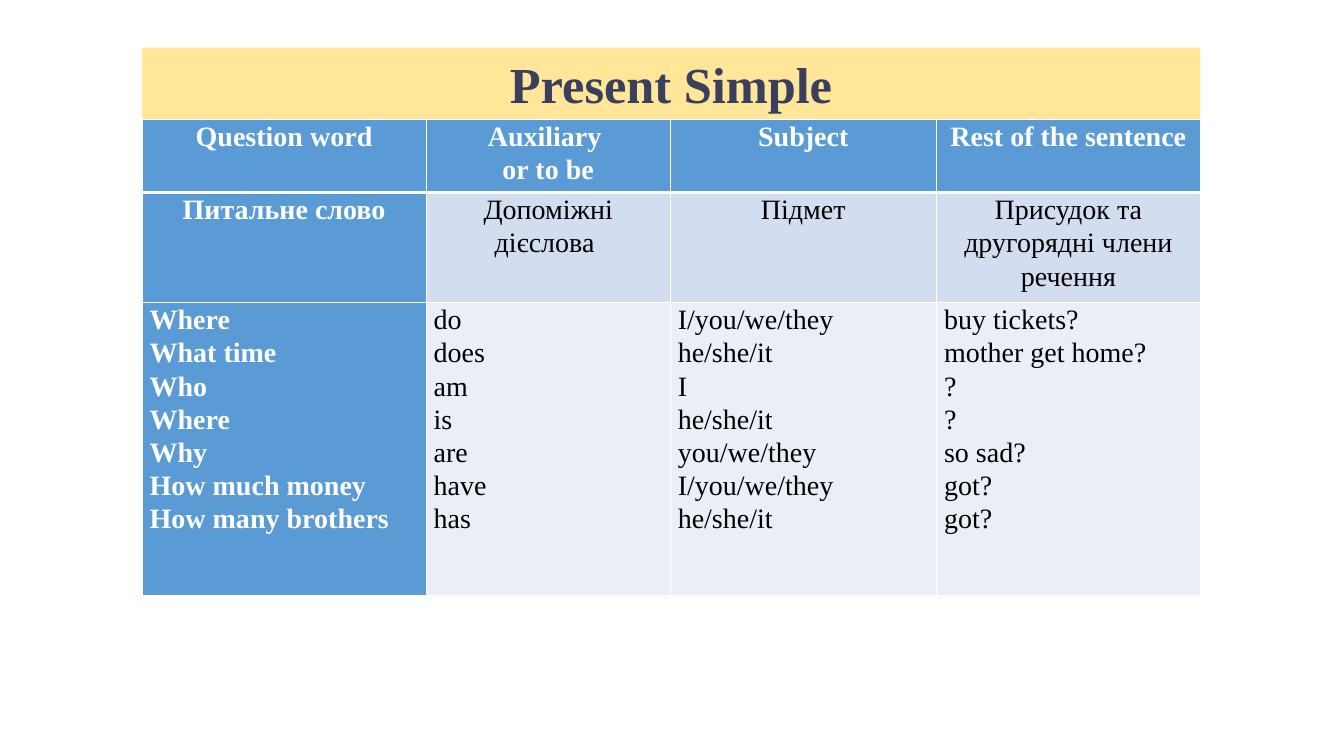
from lxml.etree import SubElement
from pptx import Presentation
from pptx.dml.color import RGBColor as Rgb
from pptx.enum.shapes import MSO_SHAPE as Shape
from pptx.enum.text import MSO_ANCHOR as Anchor, PP_ALIGN as Align
from pptx.oxml.ns import qn
from pptx.util import Cm, Pt

COLORS = {
    "banner": "FFE699",
    "title": "3A3F5D",
    "header": "5B9BD5",
    "band_dark": "D2DEEF",
    "band_light": "EAEFF7",
    "white": "FFFFFF",
    "black": "000000",
}
LEFT, WIDTH = Cm(3.58), Cm(26.67)
COLUMN_WIDTHS = [7.16, 6.15, 6.71, 6.65]
ROW_HEIGHTS = [1.85, 2.77, 7.39]
ROW_FILLS = ["header", "band_dark", "band_light"]
CELL_TEXTS = [
    [["Question word"], ["Auxiliary ", "or to be"], ["Subject"], ["Rest of the sentence"]],
    [["Питальне слово"], ["Допоміжні дієслова "], ["Підмет"],
     ["Присудок та другорядні члени речення"]],
    [
        ["Where", "What time", "Who", "Where", "Why", "How much money", "How many brothers"],
        ["do", "does", "am", "is", "are", "have", "has"],
        ["I/you/we/they", "he/she/it", "I", "he/she/it", "you/we/they", "I/you/we/they",
         "he/she/it"],
        ["buy tickets?", "mother get home?", "?", "?", "so sad?", "got?", "got?"],
    ],
]


def write_lines(frame, lines, color, align, **font_format):
    """Put each line in its own paragraph of the frame."""
    for index, line in enumerate(lines):
        para = frame.add_paragraph() if index else frame.paragraphs[0]
        para.alignment = align
        span = para.add_run()
        span.text = line
        span.font.name = "Times New Roman"
        span.font.color.rgb = Rgb.from_string(COLORS[color])
        for name, value in font_format.items():
            setattr(span.font, name, value)


def add_border(cell, side, points):
    """Draw a white line on one side of a cell."""
    line = SubElement(cell._tc.get_or_add_tcPr(), qn(f"a:ln{side}"), w=str(Pt(points)))
    fill = SubElement(line, qn("a:solidFill"))
    SubElement(fill, qn("a:srgbClr"), val=COLORS["white"])


deck = Presentation()
deck.slide_width, deck.slide_height = Cm(33.87), Cm(19.05)
page = deck.slides.add_slide(deck.slide_layouts[6])

# Table grid
table = page.shapes.add_table(3, 4, LEFT, Cm(3), WIDTH, Cm(sum(ROW_HEIGHTS))).table
for column, width in zip(table.columns, COLUMN_WIDTHS):
    column.width = Cm(width)
for row, height in zip(table.rows, ROW_HEIGHTS):
    row.height = Cm(height)

# Cells: the first row and the first column are headers
cell_format = {
    "margin_left": Cm(0.19),
    "margin_right": Cm(0.19),
    "margin_top": 0,
    "margin_bottom": 0,
    "vertical_anchor": Anchor.TOP,
}
for r, row_texts in enumerate(CELL_TEXTS):
    for c, lines in enumerate(row_texts):
        cell = table.cell(r, c)
        is_header = r == 0 or c == 0
        for name, value in cell_format.items():
            setattr(cell, name, value)
        borders = {"L": 1, "R": 1, "T": 3 if r == 1 else 1, "B": 3 if r == 0 else 1}
        for side, points in borders.items():
            add_border(cell, side, points)
        cell.fill.solid()
        fill_name = "header" if is_header else ROW_FILLS[r]
        cell.fill.fore_color.rgb = Rgb.from_string(COLORS[fill_name])
        write_lines(cell.text_frame, lines, "white" if is_header else "black",
                    Align.LEFT if r == 2 else Align.CENTER, size=Pt(20), bold=is_header)
        for para in cell.text_frame.paragraphs:
            para.line_spacing = 1.07

# Title banner
banner = page.shapes.add_shape(Shape.RECTANGLE, LEFT, Cm(1.2), WIDTH, Cm(1.8))
banner.shadow.inherit = False
banner.fill.solid()
banner.fill.fore_color.rgb = Rgb.from_string(COLORS["banner"])
banner.line.fill.background()
banner.text_frame.word_wrap = True
write_lines(banner.text_frame, ["Present Simple"], "title", Align.CENTER, size=Pt(36), bold=True)

deck.save("out.pptx")
